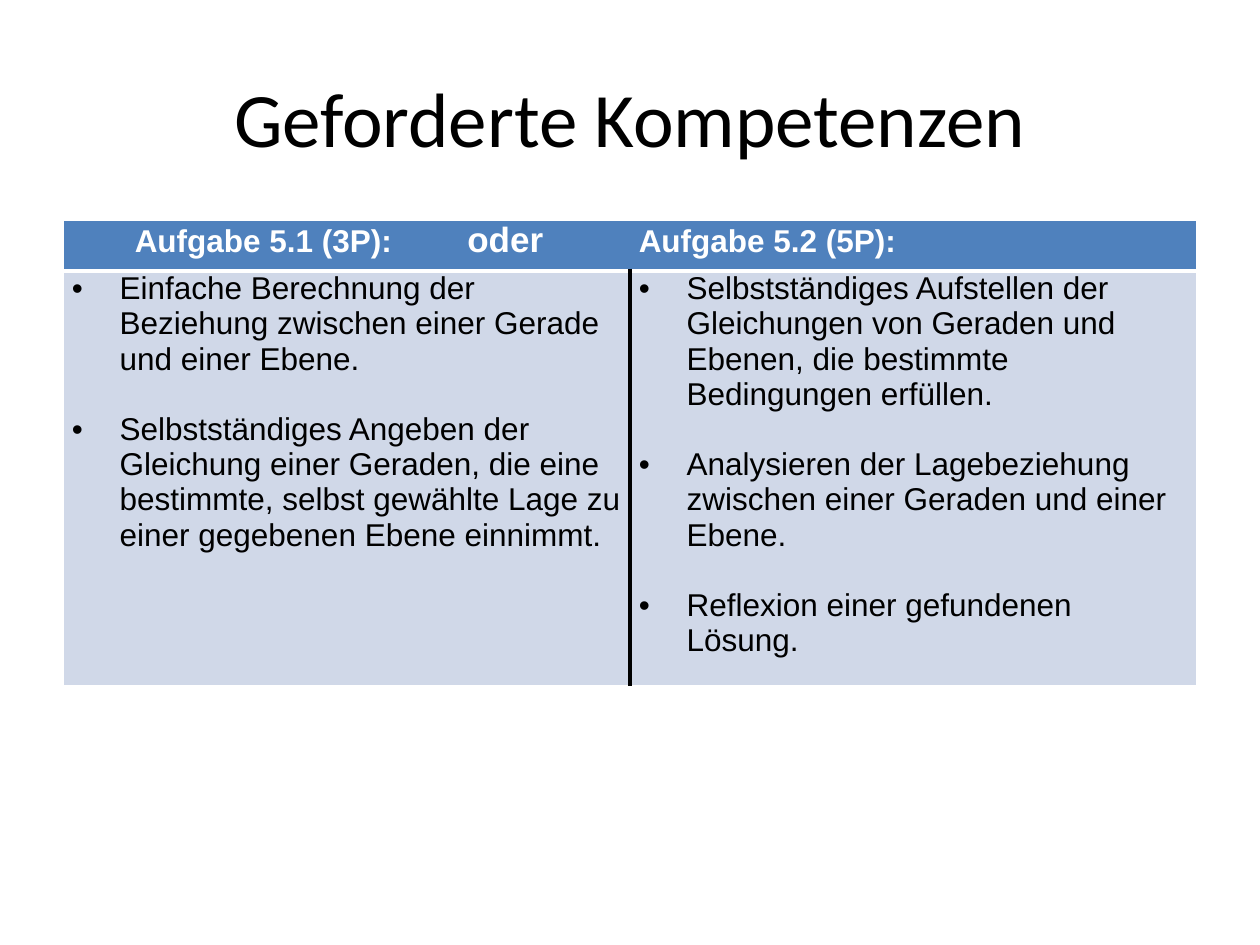
from pptx import Presentation
from pptx import util as u
from pptx.dml.color import RGBColor
from pptx.enum import text
from pptx.oxml.ns import qn
from lxml import etree

TITLE = "Geforderte Kompetenzen"
HEAD = [("\tAufgabe 5.1 (3P):\t  ", 18), ("oder", 20),
        ("\t\tAufgabe 5.2 (5P):", 18)]
SKILLS = [
    ["Einfache Berechnung der Beziehung zwischen einer Gerade und einer Ebene.",
     "Selbstständiges Angeben der Gleichung einer Geraden, die eine bestimmte, "
     "selbst gewählte Lage zu einer gegebenen Ebene einnimmt."],
    ["Selbstständiges Aufstellen der Gleichungen von Geraden und Ebenen, "
     "die bestimmte Bedingungen erfüllen.",
     "Analysieren der Lagebeziehung zwischen einer Geraden und einer Ebene.",
     "Reflexion einer gefundenen Lösung."],
]
HEX = {"head": "4F81BD", "body": "D0D8E8", "white": "FFFFFF", "black": "000000"}
WIDE, HIGH = 10, 7.5
EDGE = WIDE / 20
ROWS = [0.4, 3.29]
INDENT = u.Inches(0.38)
THIN, THICK = ("white", 1), ("white", 3)
MID = ("black", 3)


def color(name):
    return RGBColor.from_string(HEX[name])


def style(font, size, name, bold=False):
    font.name, font.size, font.bold = "Arial", u.Pt(size), bold
    font.color.rgb = color(name)


def dress(cell, fill, left, right, top, low):
    """Set a cell's margins, borders and fill."""
    cell.margin_left = cell.margin_right = u.Inches(0.07)
    cell.margin_top = cell.margin_bottom = 0
    props = cell._tc.get_or_add_tcPr()
    for side, (name, width) in zip("LRTB", (left, right, top, low)):
        line = etree.SubElement(props, qn(f"a:ln{side}"), w=str(u.Pt(width)))
        solid = etree.SubElement(line, qn("a:solidFill"))
        etree.SubElement(solid, qn("a:srgbClr"), val=HEX[name])
    cell.fill.solid()
    cell.fill.fore_color.rgb = color(fill)


def bullet(para):
    props = para._p.get_or_add_pPr()
    props.set("marL", str(INDENT))
    props.set("indent", str(-INDENT))
    etree.SubElement(props, qn("a:buFont"), typeface="Arial")
    etree.SubElement(props, qn("a:buChar"), char="•")


deck = Presentation()
deck.slide_width, deck.slide_height = u.Inches(WIDE), u.Inches(HIGH)
slide = deck.slides.add_slide(deck.slide_layouts[5])

title = slide.shapes.title
title.left, title.top = u.Inches(EDGE), u.Inches(0.3)
title.width, title.height = u.Inches(WIDE - 2 * EDGE), u.Inches(1.25)
title.text_frame.text = TITLE
title.text_frame.vertical_anchor = text.MSO_ANCHOR.MIDDLE
para = title.text_frame.paragraphs[0]
para.alignment = text.PP_ALIGN.CENTER
style(para.font, 44, "black")
para.font.name = "Calibri"

table = slide.shapes.add_table(
    len(ROWS), len(SKILLS), u.Inches(EDGE), u.Inches(1.75),
    u.Inches(WIDE - 2 * EDGE), u.Inches(sum(ROWS))).table
for row, high in zip(table.rows, ROWS):
    row.height = u.Inches(high)

for col in range(len(SKILLS)):
    dress(table.cell(0, col), "head", THIN, THIN, THIN, THICK)
head = table.cell(0, 0)
head.merge(table.cell(0, len(SKILLS) - 1))
para = head.text_frame.paragraphs[0]
for words, size in HEAD:
    run = para.add_run()
    run.text = words
    style(run.font, size, "white", True)

for col, skills in enumerate(SKILLS):
    cell = table.cell(1, col)
    left = MID if col else THIN
    right = MID if col < len(SKILLS) - 1 else THIN
    dress(cell, "body", left, right, THICK, THIN)
    cell.text_frame.text = "\n".join(skills)
    for spot, para in enumerate(cell.text_frame.paragraphs):
        para.space_before = u.Pt(20 if spot else 0)
        bullet(para)
        style(para.font, 18, "black")

deck.save("out.pptx")
